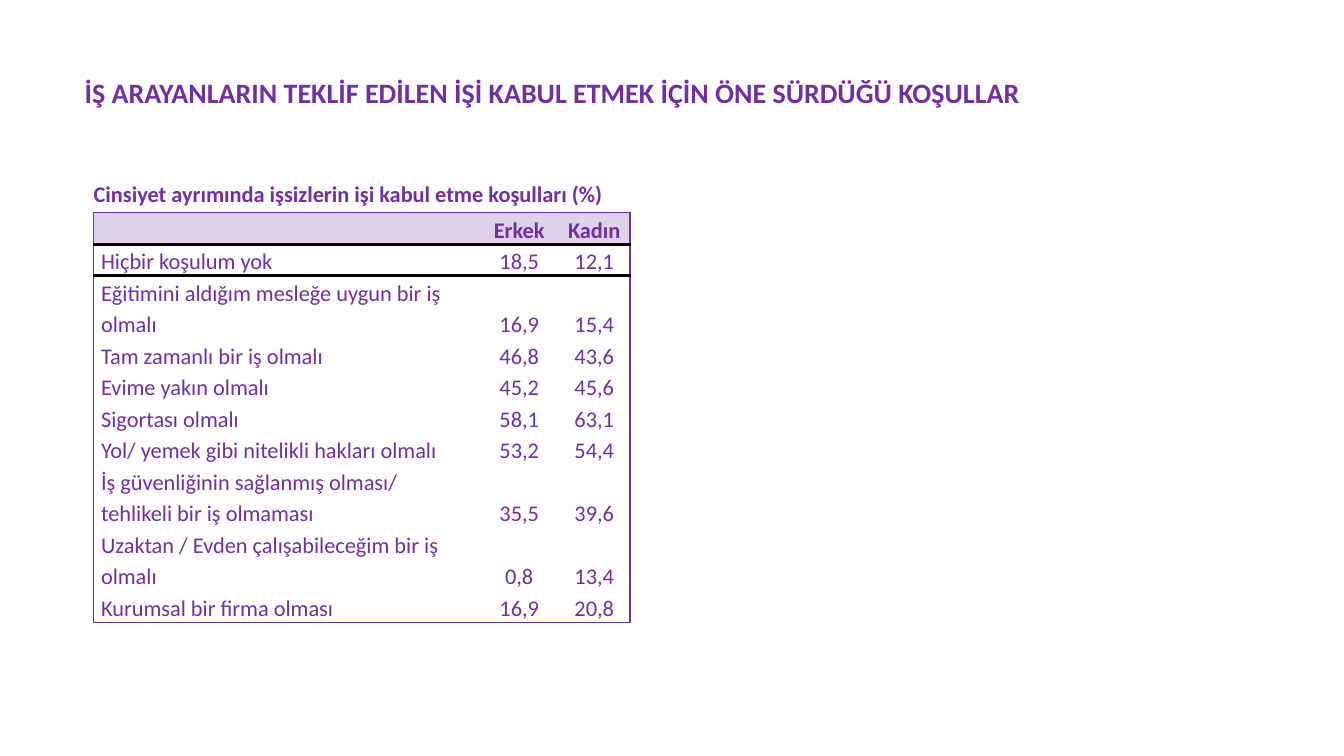
from lxml.etree import SubElement
from pptx import Presentation
from pptx.dml.color import RGBColor
from pptx.enum.text import MSO_ANCHOR as Anchor, PP_ALIGN as Align
from pptx.oxml.ns import qn
from pptx.util import Pt

PURPLE = RGBColor(0x70, 0x30, 0xA0)
BLACK = RGBColor(0, 0, 0)
NO_STYLE = "{2D5ABB26-0587-4C30-8999-92F81FD0307C}"
HEADER_OPACITY = 22
LINE_HEIGHT = 22.5
COLUMN_WIDTHS = [275.8, 56.2, 51]

# Text of each row, with the number of lines its label takes
ROWS = [
    (1, "", "Erkek", "Kadın"),
    (1, "Hiçbir koşulum yok", "18,5", "12,1"),
    (2, "Eğitimini aldığım mesleğe uygun bir iş olmalı", "16,9", "15,4"),
    (1, "Tam zamanlı bir iş olmalı", "46,8", "43,6"),
    (1, "Evime yakın olmalı", "45,2", "45,6"),
    (1, "Sigortası olmalı", "58,1", "63,1"),
    (1, "Yol/ yemek gibi nitelikli hakları olmalı", "53,2", "54,4"),
    (2, "İş güvenliğinin sağlanmış olması/ tehlikeli bir iş olmaması", "35,5", "39,6"),
    (2, "Uzaktan / Evden çalışabileceğim bir iş olmalı", "0,8", "13,4"),
    (1, "Kurumsal bir firma olması", "16,9", "20,8"),
]


def write(paragraph, text, size, bold):
    paragraph.text = text
    font = paragraph.font
    for name, value in {"name": "Calibri", "size": Pt(size), "bold": bold}.items():
        setattr(font, name, value)
    font.color.rgb = PURPLE


def add_border(cell, side, color, width):
    """Draw one side (L, R, T or B); sides must be added in that order."""
    properties = cell._tc.get_or_add_tcPr()
    line = SubElement(properties, qn(f"a:ln{side}"), w=str(Pt(width)))
    fill = SubElement(line, qn("a:solidFill"))
    SubElement(fill, qn("a:srgbClr"), val=str(color))


presentation = Presentation()
presentation.slide_width = Pt(960)
presentation.slide_height = Pt(540)
slide = presentation.slides.add_slide(presentation.slide_layouts[5])

# Title
title = slide.shapes.title
title.left, title.top, title.width, title.height = Pt(53.3), Pt(48.2), Pt(769.7), Pt(35.3)
title.text_frame.vertical_anchor = Anchor.MIDDLE
heading = title.text_frame.paragraphs[0]
write(heading, "İŞ ARAYANLARIN TEKLİF EDİLEN İŞİ KABUL ETMEK İÇİN ÖNE SÜRDÜĞÜ KOŞULLAR", 20, True)
heading.alignment = Align.LEFT

# Table of conditions
table_frame = slide.shapes.add_table(
    len(ROWS), len(COLUMN_WIDTHS), Pt(67), Pt(151.9),
    Pt(sum(COLUMN_WIDTHS)), Pt(LINE_HEIGHT * sum(row[0] for row in ROWS)))
table = table_frame.table
table.first_row = table.horz_banding = False
table._tbl.tblPr.find(qn("a:tableStyleId")).text = NO_STYLE
for column, width in zip(table.columns, COLUMN_WIDTHS):
    column.width = Pt(width)

last_row, last_column = len(ROWS) - 1, len(COLUMN_WIDTHS) - 1
for row_index, (line_count, *texts) in enumerate(ROWS):
    table.rows[row_index].height = Pt(LINE_HEIGHT * line_count)
    is_header = row_index == 0
    for column_index, text in enumerate(texts):
        cell = table.cell(row_index, column_index)
        is_label = column_index == 0
        cell.margin_left = cell.margin_right = Pt(5.2)
        cell.margin_top = cell.margin_bottom = 0
        is_middle = is_label and row_index < last_row
        cell.vertical_anchor = Anchor.MIDDLE if is_middle else Anchor.BOTTOM
        paragraph = cell.text_frame.paragraphs[0]
        write(paragraph, text, 16, is_header)
        paragraph.alignment = Align.LEFT if is_label else Align.CENTER
        paragraph.line_spacing = 1.15
        paragraph.space_after = Pt(8)

        if is_label:
            add_border(cell, "L", PURPLE, 1)
        if column_index == last_column:
            add_border(cell, "R", PURPLE, 1)
        if is_header:
            add_border(cell, "T", PURPLE, 1)
            add_border(cell, "B", BLACK, 2.25)
        elif row_index == 1:
            add_border(cell, "T", BLACK, 2.25)
        elif row_index == last_row:
            add_border(cell, "B", PURPLE, 1)

        if is_header:
            cell.fill.solid()
            cell.fill.fore_color.rgb = PURPLE
            tint = cell._tc.tcPr.find(f"{qn('a:solidFill')}/{qn('a:srgbClr')}")
            SubElement(tint, qn("a:alpha"), val=str(HEADER_OPACITY * 1000))
        else:
            cell.fill.background()

# Table caption
caption = slide.shapes.add_textbox(Pt(59.8), Pt(125.3), Pt(390.2), Pt(26.6))
caption.text_frame.word_wrap = True
write(caption.text_frame.paragraphs[0],
      "Cinsiyet ayrımında işsizlerin işi kabul etme koşulları (%)", 16, True)

presentation.save("out.pptx")
